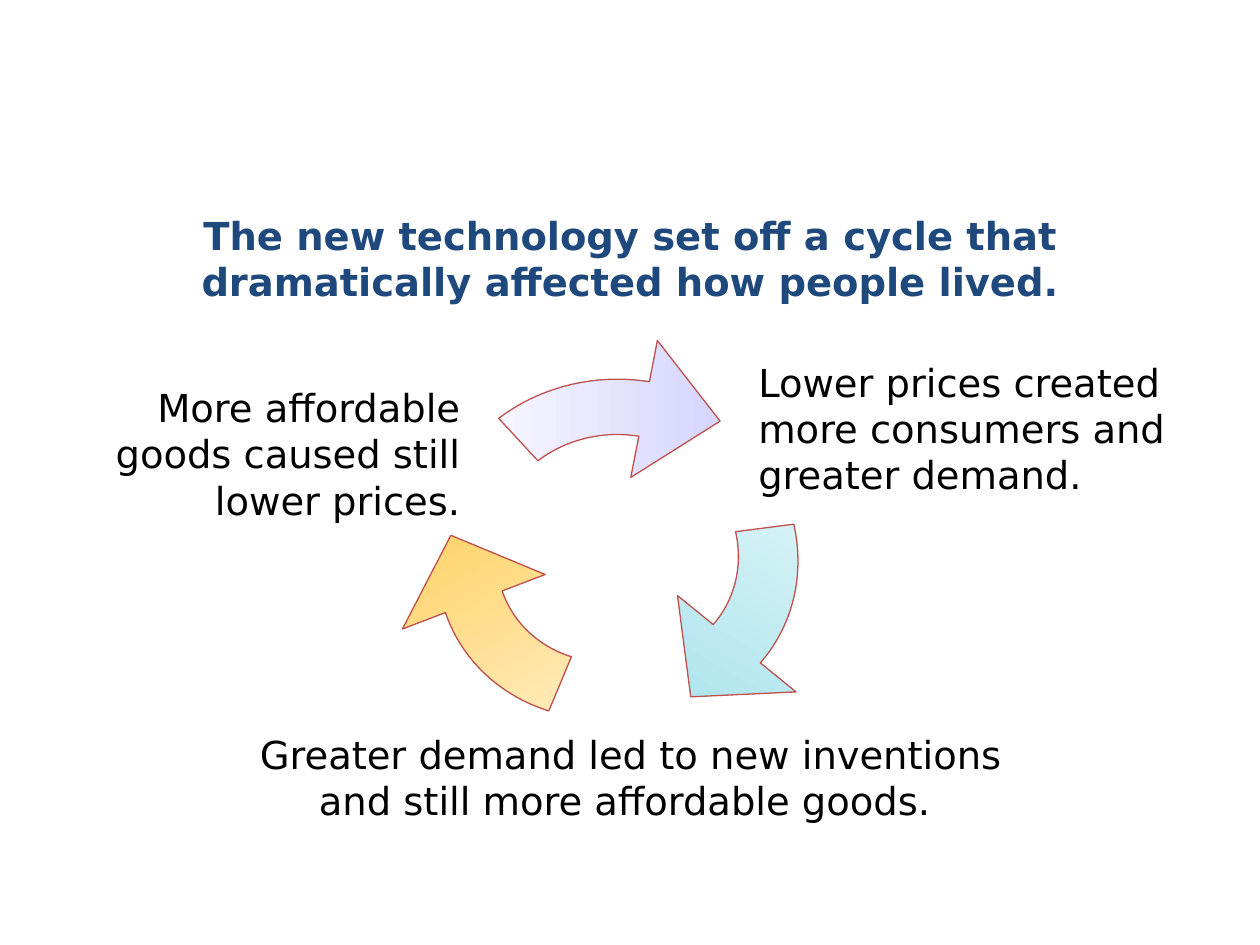
import math
from dataclasses import dataclass

import lxml.etree
import pptx
import pptx.dml.color
import pptx.enum.text
import pptx.oxml.ns
import pptx.util
from pptx.util import Inches

ALIGN = pptx.enum.text.PP_ALIGN


@dataclass(frozen=True)
class Theme:
    """Colours, font and type size of the slide."""
    font: str = "DejaVu Sans"
    size: int = 22
    title: str = "1F497D"
    text: str = "000000"
    outline: str = "C0504D"
    fade: str = "FFFFFF"
    lavender: str = "C9C9FE"
    aqua: str = "83D7E5"
    amber: str = "FFBD20"


THEME = Theme()
CENTER = (4.9, 4.34)
PATH_SIZE = 10000
CYCLE = (
    ("More affordable goods caused still lower prices.",
     (0.33, 3, 3.42, 1.2), ALIGN.RIGHT),
    ("Lower prices created more consumers and greater demand.",
     (5.92, 2.8, 3.75, 1.2), ALIGN.LEFT),
    ("Greater demand led to new inventions and still more affordable goods. ",
     (1.92, 5.75, 6.17, 0.83), ALIGN.CENTER),
)
ARROWS = (
    (0, (2.93, 2.66), THEME.lavender),
    (120, (2.66, 2.93), THEME.aqua),
    (240, (2.66, 2.93), THEME.amber),
)


def rgb(value):
    """Turn a hex string into a colour."""
    return pptx.dml.color.RGBColor.from_string(value)


def write_text(shape, text, box, alignment, color, bold=False):
    """Place a text shape and format its single paragraph."""
    shape.left, shape.top, shape.width, shape.height = map(Inches, box)
    text_frame = shape.text_frame
    text_frame.text = text
    text_frame.word_wrap = True
    text_frame.auto_size = pptx.enum.text.MSO_AUTO_SIZE.NONE
    text_frame.vertical_anchor = pptx.enum.text.MSO_ANCHOR.TOP
    paragraph = text_frame.paragraphs[0]
    paragraph.alignment = alignment
    font = paragraph.runs[0].font
    font.name = THEME.font
    font.size = pptx.util.Pt(THEME.size)
    font.bold = bold
    font.color.rgb = rgb(color)


def add_element(parent, tag, **attributes):
    """Append a drawing element with the given attributes."""
    element = lxml.etree.SubElement(parent, pptx.oxml.ns.qn(tag))
    for name, value in attributes.items():
        element.set(name, str(value))
    return element


def add_point(outline, command, radius, degrees):
    """Append a move or line to a polar point."""
    angle = math.radians(degrees)
    add_element(
        add_element(outline, command), "a:pt",
        x=round(PATH_SIZE * (0.5 + radius * math.cos(angle))),
        y=round(PATH_SIZE * (0.5 + radius * math.sin(angle))))


def add_arc(outline, radius, start, end):
    """Append an arc between two angles in degrees."""
    length = round(PATH_SIZE * radius)
    add_element(outline, "a:arcTo", wR=length, hR=length,
                stAng=start % 360 * 60000, swAng=(end - start) * 60000)


def draw_curved_arrow(shape, tail=-130, neck=-80, tip=-53.4):
    """Give a freeform the outline of a curved arrow."""
    path_list = shape.element.spPr.find(".//" + pptx.oxml.ns.qn("a:pathLst"))
    path_list.remove(path_list[0])
    outline = add_element(path_list, "a:path", w=PATH_SIZE, h=PATH_SIZE)
    add_point(outline, "a:moveTo", 0.335, neck)
    add_arc(outline, 0.335, neck, tail)
    add_point(outline, "a:lnTo", 0.5, tail)
    add_arc(outline, 0.5, tail, neck)
    for radius, angle in ((0.625, neck), (0.467, tip), (0.21, neck)):
        add_point(outline, "a:lnTo", radius, angle)
    add_element(outline, "a:close")


def add_cycle_arrow(slide, degrees, size, color):
    """Draw one gradient arrow, turned around the centre of the cycle."""
    left, right = (Inches(CENTER[0] + side * size[0] / 2) for side in (-1, 1))
    top, bottom = (Inches(CENTER[1] + side * size[1] / 2) for side in (-1, 1))
    builder = slide.shapes.build_freeform(left, top)
    builder.add_line_segments([(right, top), (right, bottom), (left, bottom)])
    shape = builder.convert_to_shape()
    draw_curved_arrow(shape)
    shape.rotation = degrees
    shape.shadow.inherit = False
    shape.fill.gradient()
    shape.fill.gradient_angle = 0
    stops = zip(shape.fill.gradient_stops, (0, 1), (THEME.fade, color))
    for stop, position, stop_color in stops:
        stop.position = position
        stop.color.rgb = rgb(stop_color)
    shape.line.color.rgb = rgb(THEME.outline)
    shape.line.width = pptx.util.Pt(0.75)


def main():
    """Build the slide and save it."""
    presentation = pptx.Presentation()
    presentation.slide_width = Inches(10)
    presentation.slide_height = Inches(7.5)
    slide = presentation.slides.add_slide(presentation.slide_layouts[5])
    write_text(
        slide.shapes.title,
        "The new technology set off a cycle that dramatically affected how people lived.",
        (0.5, 1.63, 9, 0.5), ALIGN.CENTER, THEME.title, bold=True)
    for (text, box, alignment), arrow in zip(CYCLE, ARROWS):
        text_box = slide.shapes.add_textbox(*map(Inches, box))
        write_text(text_box, text, box, alignment, THEME.text)
        add_cycle_arrow(slide, *arrow)
    presentation.save("out.pptx")


if __name__ == "__main__":
    main()
